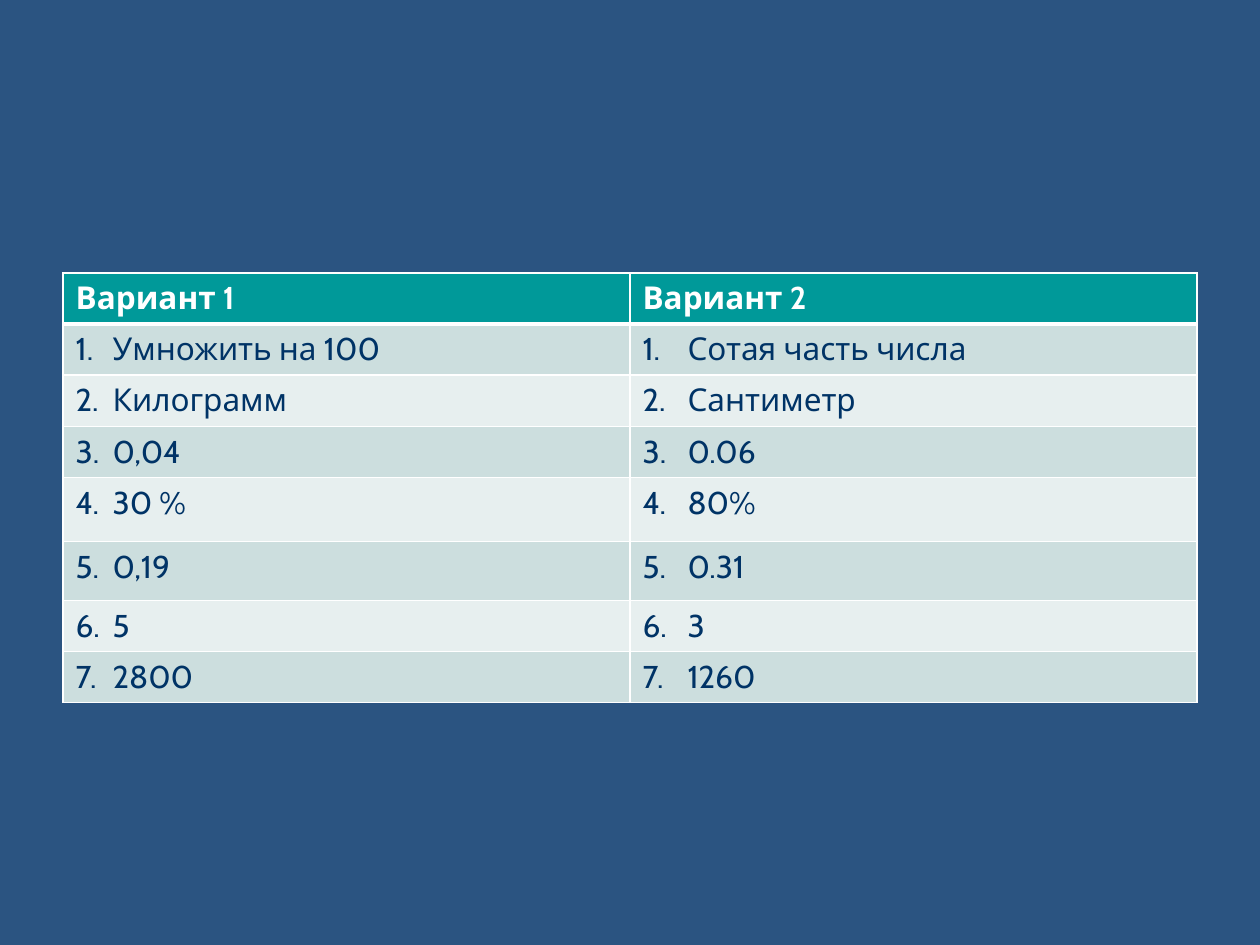
from lxml.etree import SubElement
from pptx import Presentation
from pptx.dml.color import RGBColor
from pptx.oxml.ns import qn
from pptx.util import Pt

PX = 914400 // 126
WHITE, NAVY, TEAL = "FFFFFF", "003366", "009999"
BANDS = ["CCDEDE", "E7EFEF"]
ROW_HEIGHTS = [51, 51, 51, 51, 64, 59, 51, 51]
COLUMN_WIDTH = 567
TAB_STOPS = [37, 45]
HEADERS = ["Вариант 1", "Вариант 2"]
ANSWERS = [
    ("Умножить на 100", "Сотая часть числа"),
    ("Килограмм", "Сантиметр"),
    ("0,04", "0.06"),
    ("30 %", "80%"),
    ("0,19", "0.31"),
    ("5", "3"),
    ("2800", "1260"),
]


def px(length):
    return length * PX


def color(hex_value):
    return RGBColor.from_string(hex_value)


def fill_solid(fill, hex_value):
    fill.solid()
    fill.fore_color.rgb = color(hex_value)


def add_borders(cell, widths):
    properties = cell._tc.get_or_add_tcPr()
    for side, width in widths.items():
        line = SubElement(properties, qn(f"a:ln{side}"), w=str(Pt(width)))
        solid = SubElement(line, qn("a:solidFill"))
        SubElement(solid, qn("a:srgbClr"), val=WHITE)


def add_tab_stop(paragraph, position):
    tabs = SubElement(paragraph._p.get_or_add_pPr(), qn("a:tabLst"))
    SubElement(tabs, qn("a:tab"), pos=str(px(position)), algn="l")


def write_cell(cell, text, background, text_color, bold, tab_stop=None):
    paragraph = cell.text_frame.paragraphs[0]
    if tab_stop:
        add_tab_stop(paragraph, tab_stop)
    run = paragraph.add_run()
    run.text = text
    for name, value in {"name": "Cabin", "size": Pt(18), "bold": bold}.items():
        setattr(run.font, name, value)
    run.font.color.rgb = color(text_color)
    fill_solid(cell.fill, background)


def add_answer_table(slide):
    frame = slide.shapes.add_table(
        len(ROW_HEIGHTS), len(HEADERS), px(63), px(273),
        px(COLUMN_WIDTH * len(HEADERS)), px(sum(ROW_HEIGHTS)))
    table = frame.table
    for column in table.columns:
        column.width = px(COLUMN_WIDTH)
    for row, height in zip(table.rows, ROW_HEIGHTS):
        row.height = px(height)

    for column, header in enumerate(HEADERS):
        cell = table.cell(0, column)
        add_borders(cell, {"L": 1, "R": 1, "T": 1, "B": 3})
        write_cell(cell, header, TEAL, WHITE, True)

    for number, answers in enumerate(ANSWERS, start=1):
        top = 3 if number == 1 else 1
        for column, answer in enumerate(answers):
            cell = table.cell(number, column)
            add_borders(cell, {"L": 1, "R": 1, "T": top, "B": 1})
            write_cell(cell, f"{number}.\t{answer}", BANDS[(number - 1) % 2],
                       NAVY, False, TAB_STOPS[column])


def main():
    presentation = Presentation()
    presentation.slide_width, presentation.slide_height = px(1260), px(945)
    slide = presentation.slides.add_slide(presentation.slide_layouts[6])
    fill_solid(slide.background.fill, "2B5481")
    add_answer_table(slide)
    presentation.save("out.pptx")


if __name__ == "__main__":
    main()
